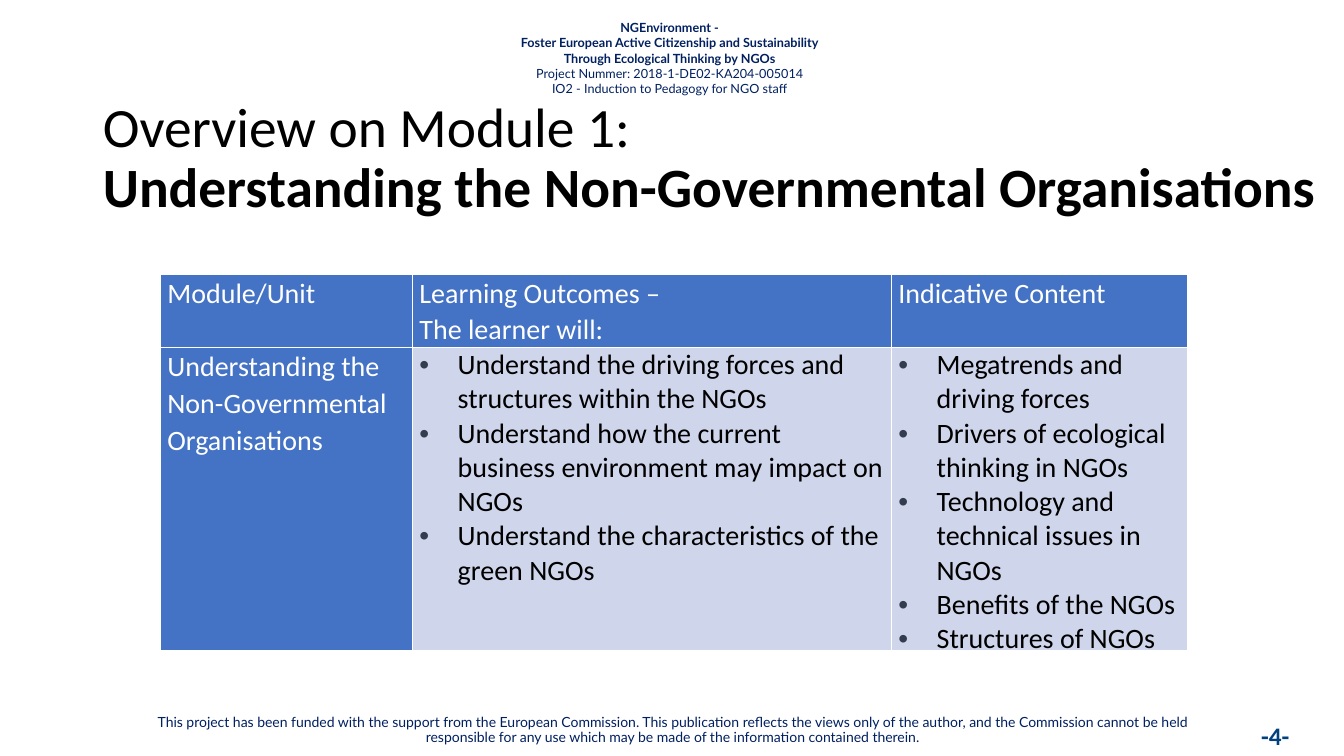
from copy import deepcopy
from dataclasses import dataclass

from lxml import etree
from pptx import Presentation
from pptx.dml.color import RGBColor
from pptx.enum.text import MSO_ANCHOR, MSO_AUTO_SIZE, PP_ALIGN
from pptx.oxml.ns import qn
from pptx.util import Inches, Pt

CENTER, LEFT = PP_ALIGN.CENTER, PP_ALIGN.LEFT
TOP, MIDDLE = MSO_ANCHOR.TOP, MSO_ANCHOR.MIDDLE
NO_AUTOFIT = MSO_AUTO_SIZE.NONE

# A paragraph is a list of lines, each a (text, bold) pair.
PROJECT = [
    ("NGEnvironment -", True),
    ("Foster European Active Citizenship and Sustainability", True),
    ("Through Ecological Thinking by NGOs", True),
    ("Project Nummer: 2018-1-DE02-KA204-005014", False),
    ("IO2 - Induction to Pedagogy for NGO staff", False),
]
DISCLAIMER = [(
    "This project has been funded with the support from the European Commission. "
    "This publication reflects the views only of the author, and the Commission "
    "cannot be held responsible for any use which may be made of the information "
    "contained therein.", False)]
PAGE = [("-4-", True)]
TITLE = [("Overview on Module 1:", False),
         ("Understanding the Non-Governmental Organisations", True)]
HEADINGS = [
    ["Module/Unit"],
    ["Learning Outcomes –", "The learner will:"],
    ["Indicative Content"],
]
UNIT = ["Understanding the Non-Governmental Organisations"]
OUTCOMES = [
    "Understand the driving forces and structures within the NGOs",
    "Understand how the current business environment may impact on NGOs",
    "Understand the characteristics of the green NGOs",
]
TOPICS = [
    "Megatrends and driving forces",
    "Drivers of ecological thinking in NGOs",
    "Technology and technical issues in NGOs",
    "Benefits of the NGOs",
    "Structures of NGOs",
]

SLIDE_SIZE = (13.33, 7.5)
PROJECT_BOX = (4.63, 0.15, 4.02, 0.91)
DISCLAIMER_BOX = (1.15, 7.05, 11.04, 0.45)
PAGE_BOX = (12.41, 7.1, 0.92, 0.4)
TITLE_BOX = (0.92, 1.01, 12.42, 1.15)
TABLE_CORNER = (1.59, 2.72)
COLUMNS = (2.5, 4.75, 2.94)
ROWS = (0.73, 2.98)
CELL_INSET = 0.07
BULLET_INDENT = 0.38


@dataclass(frozen=True)
class Theme:
    body_font: str = "Calibri"
    frame_font: str = "Lato"
    navy: str = "002060"
    page_blue: str = "00417E"
    black: str = "000000"
    white: str = "FFFFFF"
    header_fill: str = "4472C4"
    body_fill: str = "CFD5EA"
    bullet: str = "323E4F"
    project_size: float = 9
    disclaimer_size: float = 10
    page_size: float = 18
    title_size: float = 39.6
    table_size: float = 20
    border_width: float = 1


THEME = Theme()


def add_bullet(paragraph):
    properties = paragraph._p.get_or_add_pPr()
    indent = Inches(BULLET_INDENT)
    properties.set("marL", str(indent))
    properties.set("indent", str(-indent))
    color = etree.SubElement(properties, qn("a:buClr"))
    etree.SubElement(color, qn("a:srgbClr"), val=THEME.bullet)
    etree.SubElement(properties, qn("a:buFont"), typeface="Arial")
    etree.SubElement(properties, qn("a:buChar"), char="•")


def write(frame, paragraphs, *, size, color, font=THEME.body_font, align=LEFT,
          anchor=TOP, spacing=1.0, before=0, bullets=False):
    frame.word_wrap = True
    frame.vertical_anchor = anchor
    for index, lines in enumerate(paragraphs):
        paragraph = frame.add_paragraph() if index else frame.paragraphs[0]
        paragraph.alignment = align
        paragraph.line_spacing = spacing
        paragraph.space_before = Pt(before)
        if bullets:
            add_bullet(paragraph)
        for number, (text, bold) in enumerate(lines):
            if number:
                # The break takes the format of the line it ends.
                line_break = paragraph._p.add_br()
                line_break.append(deepcopy(run.font._element))
            run = paragraph.add_run()
            run.text = text
            run.font.name = font
            run.font.size = Pt(size)
            run.font.bold = bold
            run.font.color.rgb = RGBColor.from_string(color)


def add_text(slide, box, lines, **text_format):
    shape = slide.shapes.add_textbox(*map(Inches, box))
    write(shape.text_frame, [lines], **text_format)


def add_title(slide):
    title = slide.shapes.title
    title.left, title.top, title.width, title.height = map(Inches, TITLE_BOX)
    title.text_frame.auto_size = NO_AUTOFIT
    write(title.text_frame, [TITLE], size=THEME.title_size, color=THEME.black,
          anchor=MIDDLE, spacing=0.9)


def style_cell(cell, fill):
    cell.fill.solid()
    cell.fill.fore_color.rgb = RGBColor.from_string(fill)
    cell.margin_left = cell.margin_right = Inches(CELL_INSET)
    cell.margin_top = cell.margin_bottom = 0
    properties = cell._tc.get_or_add_tcPr()
    for position, side in enumerate(("lnL", "lnR", "lnT", "lnB")):
        line = etree.Element(qn(f"a:{side}"), w=str(Pt(THEME.border_width)))
        solid = etree.SubElement(line, qn("a:solidFill"))
        etree.SubElement(solid, qn("a:srgbClr"), val=THEME.white)
        properties.insert(position, line)


def add_module_table(slide):
    box = (*TABLE_CORNER, sum(COLUMNS), sum(ROWS))
    table = slide.shapes.add_table(len(ROWS), len(COLUMNS), *map(Inches, box)).table
    for column, width in zip(table.columns, COLUMNS):
        column.width = Inches(width)
    for row, height in zip(table.rows, ROWS):
        row.height = Inches(height)

    labels = [(0, column, lines) for column, lines in enumerate(HEADINGS)]
    for row, column, lines in labels + [(1, 0, UNIT)]:
        cell = table.cell(row, column)
        style_cell(cell, THEME.header_fill)
        write(cell.text_frame, [[(line, False) for line in lines]],
              size=THEME.table_size, color=THEME.white, spacing=1.07)
    for column, items in enumerate((OUTCOMES, TOPICS), start=1):
        cell = table.cell(1, column)
        style_cell(cell, THEME.body_fill)
        write(cell.text_frame, [[(item, False)] for item in items],
              size=THEME.table_size, color=THEME.black, bullets=True)


def main():
    presentation = Presentation()
    presentation.slide_width, presentation.slide_height = map(Inches, SLIDE_SIZE)
    title_only = presentation.slide_layouts[5]
    slide = presentation.slides.add_slide(title_only)
    add_text(slide, PROJECT_BOX, PROJECT, size=THEME.project_size,
             color=THEME.navy, font=THEME.frame_font, align=CENTER)
    add_text(slide, DISCLAIMER_BOX, DISCLAIMER, size=THEME.disclaimer_size,
             color=THEME.navy, font=THEME.frame_font, align=CENTER, spacing=0.9)
    add_text(slide, PAGE_BOX, PAGE, size=THEME.page_size, color=THEME.page_blue)
    add_title(slide)
    add_module_table(slide)
    presentation.save("out.pptx")


if __name__ == "__main__":
    main()
